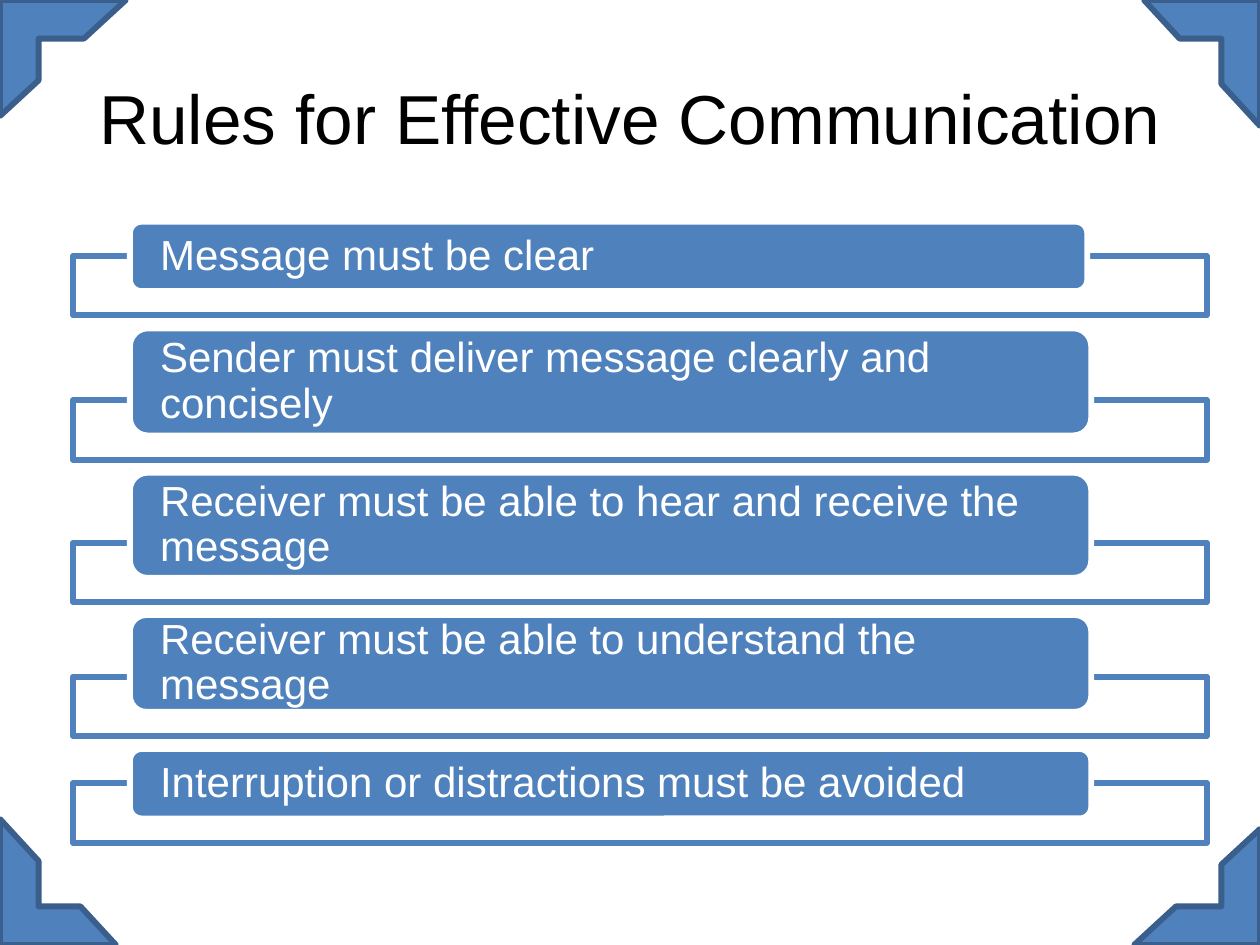
from dataclasses import dataclass

from lxml import etree
from pptx import Presentation
from pptx.dml.color import RGBColor
from pptx.enum.shapes import MSO_SHAPE
from pptx.enum.text import MSO_ANCHOR, PP_ALIGN
from pptx.oxml.ns import qn
from pptx.util import Cm, Pt

HALF_FRAME = MSO_SHAPE.HALF_FRAME
RECT = MSO_SHAPE.RECTANGLE
ROUND_RECT = MSO_SHAPE.ROUNDED_RECTANGLE
MIDDLE = MSO_ANCHOR.MIDDLE
LEFT, CENTER = PP_ALIGN.LEFT, PP_ALIGN.CENTER


@dataclass(frozen=True)
class Theme:
    blue: str = "4F81BD"
    dark_blue: str = "3A5F8C"
    white: str = "FFFFFF"
    black: str = "000000"
    font: str = "Arial"
    title_size: float = 39.6
    rule_size: float = 24
    line_width: float = 3.35


THEME = Theme()

# Lengths in centimetres
SLIDE_W, SLIDE_H = 25.4, 19.05
CORNER_W, CORNER_H = 2.54, 2.34
RULES_TOP = 4.47
FRAME_H = 1.2
FRAME_OVERLAP = 0.71
RULE_GAP = 0.26
TEXT_INDENT = 0.61
ROUND_INSET = 0.05  # share of the height that rounded corners take from the text

# Text, height and width of each rule's bar
RULES = [
    ("Message must be clear", 1.4, 19.3),
    ("Sender must deliver message clearly and concisely", 2.16, 19.38),
    ("Receiver must be able to hear and receive the message", 2.12, 19.38),
    ("Receiver must be able to understand the message", 1.95, 19.38),
    ("Interruption or distractions must be avoided", 1.4, 19.38),
]


def set_attrs(obj, values):
    for name, value in values.items():
        setattr(obj, name, value)


def add_box(s, kind, box, fill, line):
    sp = s.shapes.add_shape(kind, *map(Cm, box))
    sp.shadow.inherit = False
    sp.fill.solid()
    sp.fill.fore_color.rgb = RGBColor.from_string(fill)
    sp.line.color.rgb = RGBColor.from_string(line)
    sp.line.width = Pt(THEME.line_width)
    return sp


def set_alpha(sp, percent):
    color = sp.fill._xPr.find(qn("a:solidFill"))[0]
    etree.SubElement(color, qn("a:alpha")).set("val", str(percent * 1000))


def write_text(sp, text, size, color, frame, paragraph):
    tf = sp.text_frame
    set_attrs(tf, {"word_wrap": True, "vertical_anchor": MIDDLE, **frame})
    p = tf.paragraphs[0]
    set_attrs(p, paragraph)
    r = p.add_run()
    r.text = text
    set_attrs(r.font, {"name": THEME.font, "size": Pt(size)})
    r.font.color.rgb = RGBColor.from_string(color)


def add_corner(s, right, bottom, rotation):
    # A quarter turn swaps width and height about the centre
    shift = (CORNER_W - CORNER_H) / 2 if rotation % 180 else 0
    left = SLIDE_W - CORNER_W + shift if right else -shift
    top = SLIDE_H - CORNER_H - shift if bottom else shift
    sp = add_box(s, HALF_FRAME, (left, top, CORNER_W, CORNER_H),
                 THEME.blue, THEME.dark_blue)
    sp.rotation = rotation


def add_title(s, text):
    sp = s.shapes.add_textbox(Cm(1.27), Cm(0.76), Cm(22.86), Cm(3.18))
    write_text(sp, text, THEME.title_size, THEME.black, {}, {"alignment": CENTER})


def add_rule(s, text, top, height, width):
    """Draw a frame with its bar and return the bottom of the frame."""
    frame_top = top + height - FRAME_OVERLAP
    frame = add_box(s, RECT, (1.47, frame_top, 22.86, FRAME_H),
                    THEME.white, THEME.blue)
    set_alpha(frame, 90)
    bar = add_box(s, ROUND_RECT, (2.62, top, width, height),
                  THEME.blue, THEME.white)
    indent = Cm(TEXT_INDENT - ROUND_INSET * height)
    write_text(bar, text, THEME.rule_size, THEME.white,
               {"margin_left": indent, "margin_right": indent,
                "margin_top": 0, "margin_bottom": 0},
               {"alignment": LEFT, "line_spacing": 0.9})
    return frame_top + FRAME_H


def main():
    prs = Presentation()
    set_attrs(prs, {"slide_width": Cm(SLIDE_W), "slide_height": Cm(SLIDE_H)})
    s = prs.slides.add_slide(prs.slide_layouts[6])

    # Corner ornaments
    for right, bottom, rotation in [(False, False, 0), (False, True, 270),
                                    (True, False, 90), (True, True, 180)]:
        add_corner(s, right, bottom, rotation)

    add_title(s, "Rules for Effective Communication")

    # Stacked rules
    top = RULES_TOP
    for text, height, width in RULES:
        top = add_rule(s, text, top, height, width) + RULE_GAP

    prs.save("out.pptx")


if __name__ == "__main__":
    main()
